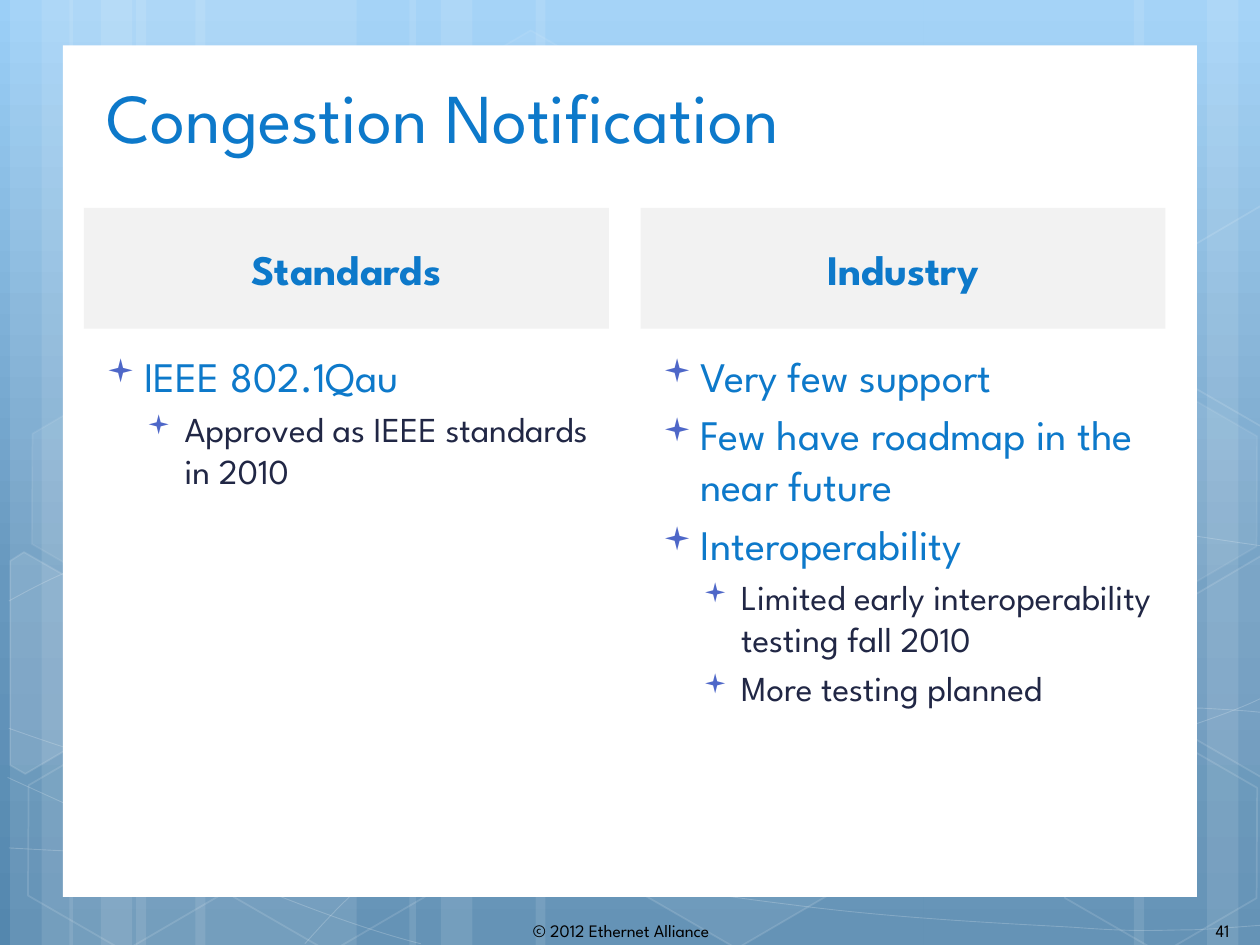
"""Build the Congestion Notification slide: two columns on a white card over a blue backdrop."""
import copy
import math
import pptx
import pptx.dml.color
import pptx.enum.shapes
import pptx.enum.text
import pptx.oxml.ns
import pptx.util
from lxml import etree

Inches, Pt = pptx.util.Inches, pptx.util.Pt
qn = pptx.oxml.ns.qn
SHAPES = pptx.enum.shapes.MSO_SHAPE
ALIGN, ANCHOR = pptx.enum.text.PP_ALIGN, pptx.enum.text.MSO_ANCHOR

FONT = "League Spartan"
WHITE, BLUE, NAVY, BULLET = "FFFFFF", "0D79CA", "212745", "4E67C8"
TITLE = "Congestion Notification"
COLUMNS = [
    ("Standards", [
        (0, "IEEE 802.1Qau"),
        (1, "Approved as IEEE standards in 2010"),
    ]),
    ("Industry", [
        (0, "Very few support"),
        (0, "Few have roadmap in the near future"),
        (0, "Interoperability"),
        (1, "Limited early interoperability testing fall 2010"),
        (1, "More testing planned"),
    ]),
]
COLUMN_LEFT, COLUMN_WIDTH, COLUMN_GAP = 2 / 3, 25 / 6, 0.25
FOOTERS = [("41", 9.55, 0.37), ("© 2012 Ethernet Alliance", 4.13, 1.85)]
LEVELS = [(24, BLUE, 0.38), (20, NAVY, 0.7)]

SKY = [(0, "9BCFF7"), (0.62, "6798BE"), (1, "5487AE")]
STRIPES = [
    (1.08, 1.75), (0.08, 0.5), (0.33, 0.83), (1.55, 1.75), (0.55, 0.5), (0.8, 0.83),
    (7.33, 1.75), (9.58, 0.5), (9, 0.83), (4.25, 3.08), (3.25, 0.5), (3.5, 0.83),
]
CURVES = [
    [(0.07, 6.73), (0.61, 6.76), (1.15, 6.79), (1.9, 6.78), (2.65, 6.77), (3.58, 6.75),
     (4.58, 6.65), (5.58, 6.55), (7, 6.36), (7.92, 6.17), (8.83, 5.98), (9.77, 5.68), (10.07, 5.51)],
    [(0.07, 4.77), (0.36, 4.61), (0.65, 4.46), (1.21, 4.31), (1.78, 4.16), (2.59, 3.94),
     (3.47, 3.87), (4.36, 3.8), (5.44, 3.79), (6.54, 3.87), (7.64, 3.95), (9.47, 4.26), (10.07, 4.34)],
    [(0.06, 6.17), (1.27, 6.72), (2.47, 7.27), (3.34, 7.49)],
    [(0.07, 5.78), (0.38, 5.89), (0.7, 6), (1.28, 6.16), (1.86, 6.31), (2.73, 6.56),
     (3.57, 6.73), (4.4, 6.9), (5.45, 7.08), (6.28, 7.18), (7.11, 7.29), (8, 7.33),
     (8.53, 7.36), (9.05, 7.4), (9.19, 7.38), (9.45, 7.38), (9.71, 7.37), (9.89, 7.35), (10.07, 7.34)],
    [(2.42, 7.49), (2.6, 7.29), (2.78, 7.09), (3.02, 6.91), (3.26, 6.73), (3.6, 6.53),
     (3.88, 6.39), (4.16, 6.25), (4.33, 6.19), (4.7, 6.09), (5.06, 5.99), (5.73, 5.85),
     (6.08, 5.78), (6.44, 5.71), (6.49, 5.71), (6.8, 5.69), (7.11, 5.66), (7.6, 5.63),
     (7.94, 5.62), (8.29, 5.61), (8.86, 5.62), (8.86, 5.62), (9.08, 5.62), (9.31, 5.62),
     (9.53, 5.62), (9.71, 5.63), (9.88, 5.64), (9.97, 5.65), (10.06, 5.66), (10.03, 5.65), (10.06, 5.66)],
]
HEXAGONS = [
    (3.34, 0.36, 4, 8), (4.97, 5.89, 6, 12), (0.11, 5.91, 0, 12),
    (0.14, 3.12, 7, 8), (1.74, 5.92, 0, 12), (7.53, 4.53, 10, 12),
    (8.34, 5.93, 0, 12), (8.34, 3.14, 7, 8),
]
CUT_HEXAGONS = [
    ((0.36, 5.35), [(0.08, 4.45), (0.19, 4.38), (0.96, 4.82), (0.95, 5.7), (0.2, 6.14), (0.08, 6.07)], 10),
    ((9.85, 5.2), [(9.26, 4.85), (10.01, 4.41), (10.09, 4.46), (10.09, 6.13), (10.02, 6.17), (9.26, 5.73)], 4),
    ((9.85, 2.41), [(9.26, 2.07), (10.01, 1.63), (10.1, 1.68), (10.09, 3.35), (10.02, 3.39), (9.26, 2.95)], 0),
]
TILT = 30


def rgb(value):
    return pptx.dml.color.RGBColor.from_string(value)


def paint(fill, color, opacity):
    if not opacity:
        fill.background()
        return
    fill.solid()
    fill.fore_color.rgb = rgb(color)


def style(shape, color=WHITE, opacity=100, line_width=0, line_opacity=0):
    shape.shadow.inherit = False
    paint(shape.fill, color, opacity)
    paint(shape.line.fill, WHITE, line_opacity)
    if line_opacity:
        shape.line.width = Pt(line_width)
    properties = shape.element.spPr
    for parent, amount in ((properties, opacity), (properties.find(qn("a:ln")), line_opacity)):
        swatch = parent.find(f"{qn('a:solidFill')}/{qn('a:srgbClr')}")
        if swatch is not None and amount < 100:
            etree.SubElement(swatch, qn("a:alpha"), val=str(amount * 1000))


def rectangle(slide, left, top, width, height, color=WHITE, opacity=100):
    shape = slide.shapes.add_shape(SHAPES.RECTANGLE, *map(Inches, (left, top, width, height)))
    style(shape, color, opacity)
    return shape


def outline(slide, points, close):
    points = [(Inches(x), Inches(y)) for x, y in points]
    builder = slide.shapes.build_freeform(*points[0])
    builder.add_line_segments(points[1:], close=close)
    return builder.convert_to_shape()


def curve(slide, controls):
    shape = outline(slide, controls, False)
    segments = shape.element.findall(f".//{qn('a:lnTo')}")
    for start in range(0, len(segments), 3):
        bend = etree.Element(qn("a:cubicBezTo"))
        segments[start].addprevious(bend)
        for segment in segments[start:start + 3]:
            bend.append(segment[0])
            segment.getparent().remove(segment)
    return shape


def turn(point, center, degrees):
    angle = math.radians(degrees)
    x, y = point[0] - center[0], point[1] - center[1]
    return (center[0] + x * math.cos(angle) - y * math.sin(angle),
            center[1] + x * math.sin(angle) + y * math.cos(angle))


def write(paragraph, words, size, color, bold=False):
    run = paragraph.add_run()
    run.text = words
    run.font.name, run.font.size, run.font.bold = FONT, Pt(size), bold
    run.font.color.rgb = rgb(color)


def text_frame(slide, left, top, width, height, wrap=True):
    frame = slide.shapes.add_textbox(*map(Inches, (left, top, width, height))).text_frame
    frame.word_wrap = wrap
    return frame


def add_bullet(paragraph, indent, spaced):
    properties = paragraph._p.get_or_add_pPr()
    properties.set("marL", str(Inches(indent)))
    properties.set("indent", str(Inches(-0.3)))
    if spaced:
        space = etree.SubElement(properties, qn("a:spcBef"))
        etree.SubElement(space, qn("a:spcPct"), val="20000")
    color = etree.SubElement(properties, qn("a:buClr"))
    etree.SubElement(color, qn("a:srgbClr"), val=BULLET)
    etree.SubElement(properties, qn("a:buSzPct"), val="76000")
    etree.SubElement(properties, qn("a:buFont"), typeface="Wingdings")
    etree.SubElement(properties, qn("a:buChar"), char="▪")


def draw_backdrop(slide):
    sky = slide.background.fill
    sky.gradient()
    sky.gradient_angle = 270
    stops = slide.element.find(f".//{qn('a:gsLst')}")
    stops.append(copy.deepcopy(stops[-1]))
    for stop, (position, color) in zip(sky.gradient_stops, SKY):
        stop.position = position
        stop.color.rgb = rgb(color)
    for left, width in STRIPES:
        rectangle(slide, left, 0, width, 7.5, opacity=10)
    for controls in CURVES:
        style(curve(slide, controls), opacity=0, line_width=0.5, line_opacity=20)
    for left, top, opacity, line_opacity in HEXAGONS:
        hexagon = slide.shapes.add_shape(SHAPES.HEXAGON, *map(Inches, (left, top, 1.75, 1.52)))
        hexagon.adjustments[0], hexagon.adjustments[1] = 0.285, 1.155
        hexagon.rotation = TILT
        style(hexagon, opacity=opacity, line_width=1, line_opacity=line_opacity)
    for center, corners, opacity in CUT_HEXAGONS:
        cut = outline(slide, [turn(corner, center, -TILT) for corner in corners], True)
        cut.rotation = TILT
        style(cut, opacity=opacity, line_width=1, line_opacity=12)
    rectangle(slide, 0.5, 0.36, 9, 6.76)


def draw_column(slide, left, heading, items):
    header = rectangle(slide, left, 1.65, COLUMN_WIDTH, 0.96, "F2F2F2").text_frame
    header.vertical_anchor = ANCHOR.MIDDLE
    header.paragraphs[0].alignment = ALIGN.CENTER
    write(header.paragraphs[0], heading, 24, BLUE, True)
    body = text_frame(slide, left, 2.73, COLUMN_WIDTH, 4.2)
    for index, (level, words) in enumerate(items):
        paragraph = body.add_paragraph() if index else body.paragraphs[0]
        size, color, indent = LEVELS[level]
        add_bullet(paragraph, indent, index > 0)
        paragraph.level = level
        write(paragraph, words, size, color)


def main():
    deck = pptx.Presentation()
    deck.slide_width, deck.slide_height = Inches(10), Inches(7.5)
    slide = deck.slides.add_slide(deck.slide_layouts[6])
    draw_backdrop(slide)
    for words, left, width in FOOTERS:
        write(text_frame(slide, left, 7.25, width, 0.27, False).paragraphs[0], words, 10, "000000")
    title = text_frame(slide, 0.75, 0.49, 7, 0.85)
    title.vertical_anchor = ANCHOR.MIDDLE
    write(title.paragraphs[0], TITLE, 40, BLUE)
    for index, (heading, items) in enumerate(COLUMNS):
        draw_column(slide, COLUMN_LEFT + index * (COLUMN_WIDTH + COLUMN_GAP), heading, items)
    deck.save("out.pptx")


if __name__ == "__main__":
    main()
